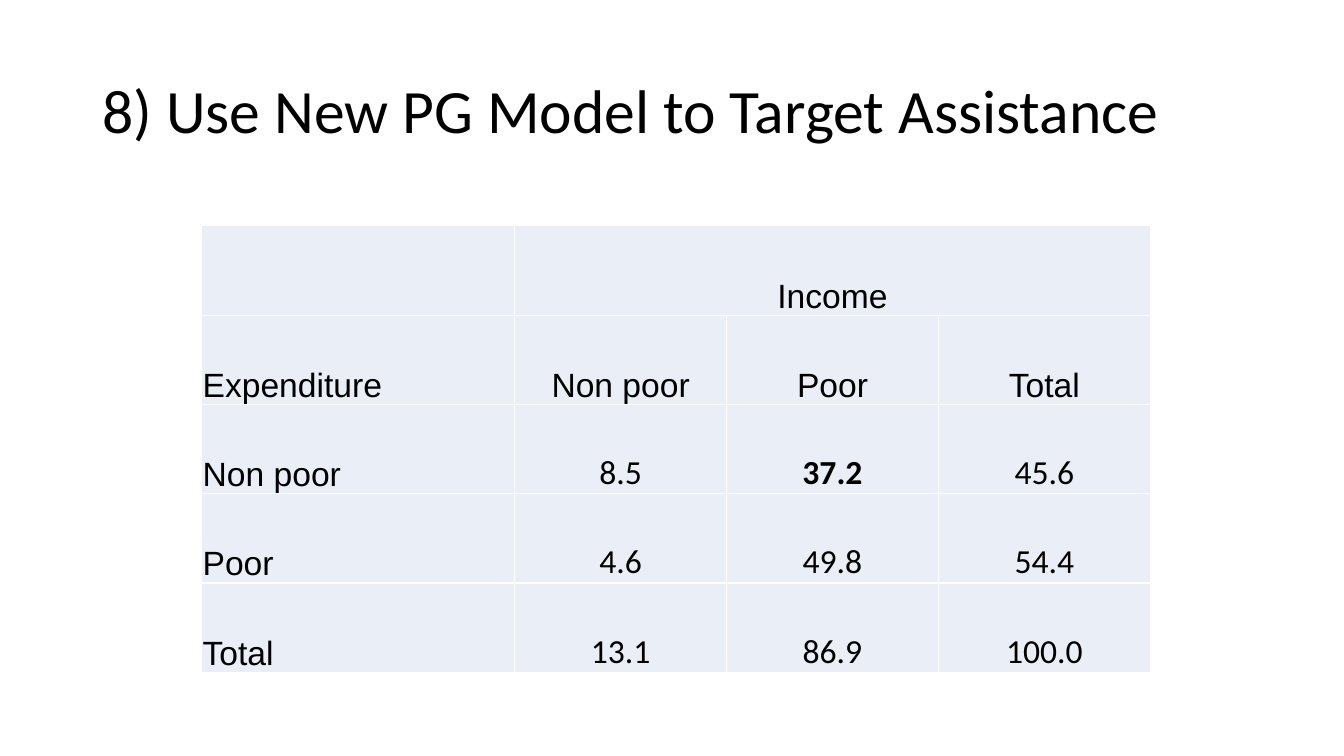
from lxml.etree import SubElement
from pptx import Presentation
from pptx.dml.color import RGBColor
from pptx.enum.text import MSO_ANCHOR as Anchor, PP_ALIGN as Align
from pptx.oxml.ns import qn
from pptx.util import Inches, Pt

COLORS = {"text": "000000", "cell": "EAEFF7", "border": "FFFFFF"}
WIDTH, HEIGHT = 13.33, 7.5
TITLE_BOX = (0.92, 0.4, 11.5, 1.45)
TABLE_BOX = (2, 2.24, 9.41, 4.43)
COLUMN_SHARES = (0.33, 0.2233, 0.2233, 0.2233)
ROWS = [
    ["", "Income", "", ""],
    ["Expenditure", "Non poor", "Poor", "Total"],
    ["Non poor", "8.5", "37.2", "45.6"],
    ["Poor", "4.6", "49.8", "54.4"],
    ["Total", "13.1", "86.9", "100.0"],
]
HEADER_ROWS = 2
HIGHLIGHT = (2, 2)


def style_text(para, size, font, bold=False):
    """Format every run of a paragraph."""
    for span in para.runs:
        span.font.size = Pt(size)
        span.font.name = font
        span.font.bold = bold
        span.font.color.rgb = RGBColor.from_string(COLORS["text"])


def add_title(page, box, text):
    """Place the slide title, centred vertically in its box."""
    frame = page.shapes.add_textbox(*map(Inches, box)).text_frame
    frame.word_wrap = True
    frame.vertical_anchor = Anchor.MIDDLE
    frame.text = text
    para = frame.paragraphs[0]
    para.line_spacing = 0.9
    style_text(para, 44, "Calibri")


def style_cell(cell):
    """Set a cell's margins, anchor, borders and fill."""
    cell.margin_left = cell.margin_right = cell.margin_top = Inches(0.01)
    cell.margin_bottom = 0
    cell.vertical_anchor = Anchor.BOTTOM
    properties = cell._tc.get_or_add_tcPr()
    for side in ("lnL", "lnR", "lnT", "lnB"):
        line = SubElement(properties, qn(f"a:{side}"), w=str(Pt(1)))
        fill = SubElement(line, qn("a:solidFill"))
        SubElement(fill, qn("a:srgbClr"), val=COLORS["border"])
    cell.fill.solid()
    cell.fill.fore_color.rgb = RGBColor.from_string(COLORS["cell"])


def add_poverty_table(page, box, rows):
    """Place the table of income against expenditure poverty."""
    left, top, width, height = box
    table = page.shapes.add_table(
        len(rows), len(COLUMN_SHARES), *map(Inches, box)).table
    for column, share in zip(table.columns, COLUMN_SHARES):
        column.width = Inches(width * share)
    for row in table.rows:
        row.height = Inches(height / len(rows))
    for r, values in enumerate(rows):
        for c, value in enumerate(values):
            cell = table.cell(r, c)
            style_cell(cell)
            cell.text = value
            para = cell.text_frame.paragraphs[0]
            para.alignment = Align.CENTER if c else Align.LEFT
            is_label = r < HEADER_ROWS or c == 0
            style_text(para, 24, "Arial" if is_label else "Calibri",
                       (r, c) == HIGHLIGHT)
    table.cell(0, 1).merge(table.cell(0, len(COLUMN_SHARES) - 1))


def main():
    """Build and save the deck."""
    deck = Presentation()
    deck.slide_width, deck.slide_height = Inches(WIDTH), Inches(HEIGHT)
    page = deck.slides.add_slide(deck.slide_layouts[6])
    add_title(page, TITLE_BOX, "8) Use New PG Model to Target Assistance")
    add_poverty_table(page, TABLE_BOX, ROWS)
    deck.save("out.pptx")


if __name__ == "__main__":
    main()
